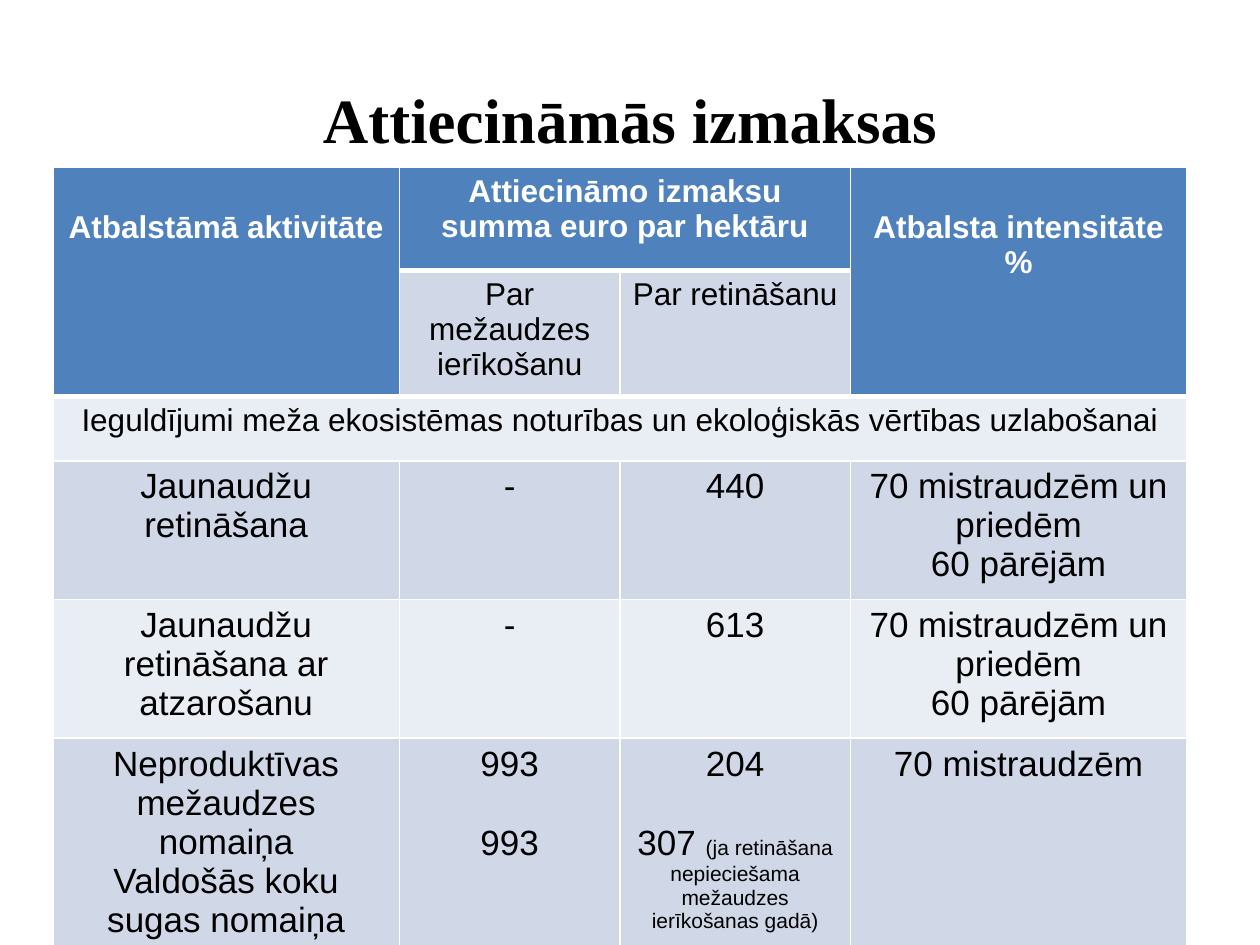
import pptx
import pptx.dml.color
import pptx.enum.text
import pptx.oxml.ns
import pptx.util
from lxml import etree

RGBColor = pptx.dml.color.RGBColor
HEADER_BLUE = RGBColor(0x4F, 0x81, 0xBD)
BAND_DARK = RGBColor(0xD0, 0xD8, 0xE8)
BAND_LIGHT = RGBColor(0xE9, 0xED, 0xF4)
WHITE = RGBColor(0xFF, 0xFF, 0xFF)
BLACK = RGBColor(0, 0, 0)

SLIDE_WIDTH = pptx.util.Inches(10)
SLIDE_HEIGHT = pptx.util.Inches(7.5)
COLUMN_WIDTHS = [2.75, 1.75, 1.83, 2.67]
ROW_HEIGHTS = [0.82, 0.94, 0.51, 1.03, 1.03, 1.64]
ROW_FILLS = [HEADER_BLUE, BAND_DARK, BAND_LIGHT, BAND_DARK, BAND_LIGHT, BAND_DARK]
MERGES = [((0, 0), (1, 0)), ((0, 1), (0, 2)), ((0, 3), (1, 3)), ((2, 0), (2, 3))]
HEADER_RULES = (1, 2)  # horizontal grid lines drawn thicker

INTENSITY = ["70 mistraudzēm un priedēm", "60 pārējām"]
NOTE = "(ja retināšana nepieciešama mežaudzes ierīkošanas gadā)"
# Each cell is a list of paragraphs; None belongs to a merged neighbour.
ROWS = [
    [["Atbalstāmā aktivitāte"], ["Attiecināmo izmaksu summa euro par hektāru"],
     None, ["Atbalsta intensitāte %"]],
    [None, ["Par mežaudzes ierīkošanu"], ["Par retināšanu"], None],
    [["Ieguldījumi meža ekosistēmas noturības un ekoloģiskās vērtības uzlabošanai"],
     None, None, None],
    [["Jaunaudžu retināšana"], ["-"], ["440"], INTENSITY],
    [["Jaunaudžu retināšana ar atzarošanu"], ["-"], ["613"], INTENSITY],
    [["Neproduktīvas mežaudzes nomaiņa", "Valdošās koku sugas nomaiņa"],
     ["993", "993"], ["204", "307 "], ["70 mistraudzēm"]],
]


def format_run(run, size, color=BLACK, bold=False, face="Arial"):
    run.font.name = face
    run.font.size = pptx.util.Pt(size)
    run.font.bold = bold
    run.font.color.rgb = color


def add_title(slide, wording):
    title = slide.shapes.add_textbox(
        int(SLIDE_WIDTH * 0.05), int(SLIDE_HEIGHT * 0.04),
        int(SLIDE_WIDTH * 0.9), int(SLIDE_HEIGHT * 0.17))
    frame = title.text_frame
    frame.word_wrap = True
    frame.vertical_anchor = pptx.enum.text.MSO_ANCHOR.MIDDLE
    frame.text = wording
    heading = frame.paragraphs[0]
    heading.alignment = pptx.enum.text.PP_ALIGN.CENTER
    format_run(heading.runs[0], 36, bold=True, face="Times New Roman")


def set_borders(cell, row):
    """Rule the cell in white, thicker along the header lines."""
    properties = cell._tc.get_or_add_tcPr()
    widths = {"L": 1, "R": 1,
              "T": 3 if row in HEADER_RULES else 1,
              "B": 3 if row + 1 in HEADER_RULES else 1}
    qn = pptx.oxml.ns.qn
    for position, (side, width) in enumerate(widths.items()):
        line = etree.Element(qn(f"a:ln{side}"), w=str(pptx.util.Pt(width)))
        fill = etree.SubElement(line, qn("a:solidFill"))
        etree.SubElement(fill, qn("a:srgbClr"), val=str(WHITE))
        properties.insert(position, line)


def fill_cell(cell, paragraphs, size, color, bold):
    cell.text_frame.text = "\n".join(paragraphs)
    for paragraph in cell.text_frame.paragraphs:
        paragraph.alignment = pptx.enum.text.PP_ALIGN.CENTER
        for run in paragraph.runs:
            format_run(run, size, color, bold)


def add_cost_table(slide):
    table = slide.shapes.add_table(
        len(ROWS), len(COLUMN_WIDTHS),
        int(SLIDE_WIDTH * 0.042), int(SLIDE_HEIGHT * 0.177),
        pptx.util.Inches(sum(COLUMN_WIDTHS)),
        pptx.util.Inches(sum(ROW_HEIGHTS))).table
    table.first_row = table.horz_banding = False
    for column, width in zip(table.columns, COLUMN_WIDTHS):
        column.width = pptx.util.Inches(width)
    for row, height in zip(table.rows, ROW_HEIGHTS):
        row.height = pptx.util.Inches(height)
    for first, last in MERGES:
        table.cell(*first).merge(table.cell(*last))

    for r, contents in enumerate(ROWS):
        for c, paragraphs in enumerate(contents):
            cell = table.cell(r, c)
            cell.fill.solid()
            cell.fill.fore_color.rgb = ROW_FILLS[r]
            set_borders(cell, r)
            if paragraphs:
                fill_cell(cell, paragraphs, 18 if r < 3 else 20,
                          WHITE if r == 0 else BLACK, r == 0)

    for c in (0, 3):
        table.cell(0, c).margin_top = pptx.util.Inches(0.34)
    for c in (1, 2):
        second_amount = table.cell(5, c).text_frame.paragraphs[1]
        second_amount.space_before = pptx.util.Pt(23)
    note = second_amount.add_run()
    note.text = NOTE
    format_run(note, 12)


def main():
    deck = pptx.Presentation()
    deck.slide_width = SLIDE_WIDTH
    deck.slide_height = SLIDE_HEIGHT
    slide = deck.slides.add_slide(deck.slide_layouts[6])
    add_title(slide, "Attiecināmās izmaksas")
    add_cost_table(slide)
    deck.save("out.pptx")


if __name__ == "__main__":
    main()
